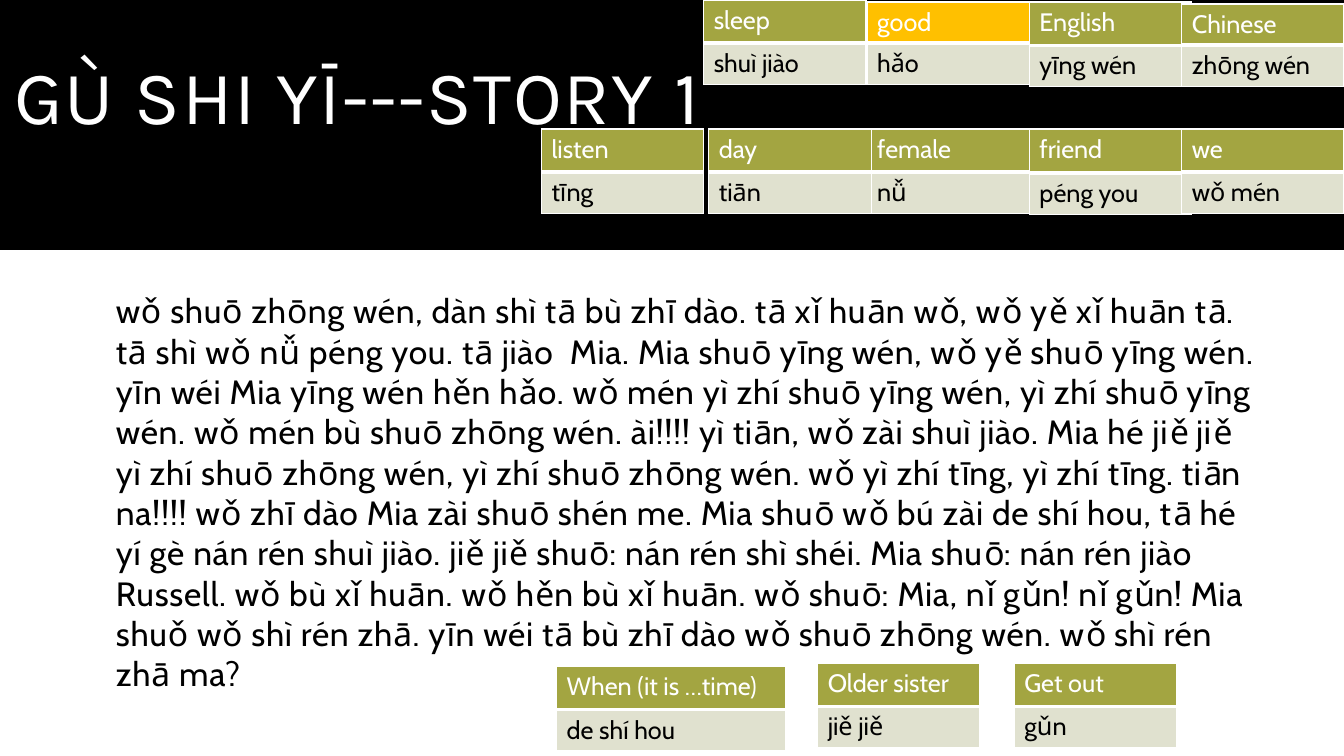
from lxml.etree import SubElement
from pptx import Presentation
from pptx.dml.color import RGBColor
from pptx.enum.shapes import MSO_SHAPE
from pptx.enum.text import MSO_ANCHOR, MSO_AUTO_SIZE, PP_ALIGN
from pptx.oxml import parse_xml
from pptx.oxml.ns import nsdecls, qn
from pptx.util import Inches, Pt

COLORS = {"black": "000000", "white": "FFFFFF", "olive": "A3A541",
          "gold": "FFC000", "pale": "E0E1CF"}
PINYIN_HEIGHT = 0.41
STORY = (
    "wǒ shuō zhōng wén, dàn shì tā bù zhī dào. tā xǐ huān wǒ, wǒ yě xǐ huān tā. "
    "tā shì wǒ nǚ péng you. tā jiào  Mia. Mia shuō yīng wén, wǒ yě shuō yīng wén. "
    "yīn wéi Mia yīng wén hěn hǎo. wǒ mén yì zhí shuō yīng wén, yì zhí shuō yīng wén. "
    "wǒ mén bù shuō zhōng wén. ài!!!! yì tiān, wǒ zài shuì jiào. Mia hé jiě jiě "
    "yì zhí shuō zhōng wén, yì zhí shuō zhōng wén. wǒ yì zhí tīng, yì zhí tīng. "
    "tiān na!!!! wǒ zhī dào Mia zài shuō shén me. Mia shuō wǒ bú zài de shí hou, "
    "tā hé yí gè nán rén shuì jiào. jiě jiě shuō: nán rén shì shéi. "
    "Mia shuō: nán rén jiào Russell. wǒ bù xǐ huān. wǒ hěn bù xǐ huān. "
    "wǒ shuō: Mia, nǐ gǔn! nǐ gǔn! Mia shuǒ wǒ shì rén zhā. "
    "yīn wéi tā bù zhī dào wǒ shuō zhōng wén. wǒ shì rén zhā ma?"
)
VOCABULARY = [
    ("good", "hǎo", 8.6, 0.02, {"header_height": 0.41, "header": "gold"}),
    ("English", "yīng wén", 10.21, 0.02, {}),
    ("friend", "péng you", 10.21, 1.28, {"header_height": 0.44}),
    ("female", "nǚ", 8.6, 1.28, {}),
    ("Chinese", "zhōng wén", 11.72, 0.04, {"header_height": 0.4}),
    ("we", "wǒ mén", 11.72, 1.28, {}),
    ("day", "tiān", 7.03, 1.28, {}),
    ("sleep", "shuì jiào", 6.98, 0, {}),
    ("listen", "tīng", 5.37, 1.28, {}),
    ("When (it is …time)", "de shí hou", 5.52, 6.61, {"width": 2.27}),
    ("Older sister", "jiě jiě", 8.11, 6.58, {}),
    ("Get out", "gǔn", 10.06, 6.58, {}),
]


def rgb(name):
    """Return the named colour."""
    return RGBColor.from_string(COLORS[name])


def add_run(p, text, font, size, color, spacing=0):
    """Add a formatted run, with letter spacing in points."""
    r = p.add_run()
    r.text = text
    r.font.name, r.font.size, r.font.bold = font, Pt(size), False
    r.font.color.rgb = rgb(color)
    if spacing:
        r.font._element.set("spc", str(round(spacing * 100)))


def add_band(s):
    """Add the black band behind the title."""
    band = s.shapes.add_shape(MSO_SHAPE.RECTANGLE, 0, 0, Inches(13.33), Inches(2.48))
    band.shadow.inherit = False
    band.fill.solid()
    band.fill.fore_color.rgb = rgb("black")
    band.line.fill.background()
    s.shapes._spTree.insert(2, band._element)


def fill_placeholder(sp, box, anchor, line_spacing):
    """Place a placeholder and return its left-aligned, unbulleted paragraph."""
    sp.left, sp.top, sp.width, sp.height = map(Inches, box)
    tf = sp.text_frame
    tf.word_wrap, tf.auto_size = True, MSO_AUTO_SIZE.NONE
    tf.vertical_anchor = anchor
    p = tf.paragraphs[0]
    p.alignment, p.line_spacing = PP_ALIGN.LEFT, line_spacing
    p.space_before = Pt(0)
    pPr = p._p.get_or_add_pPr()
    pPr.set("marL", "0")
    pPr.set("indent", "0")
    SubElement(pPr, qn("a:buNone"))
    return p


def set_borders(cell, bottom):
    """Draw white cell borders, one point wide except at the bottom."""
    tcPr = cell._tc.get_or_add_tcPr()
    widths = {"L": 1, "R": 1, "T": 1, "B": bottom}
    for i, (side, width) in enumerate(widths.items()):
        tcPr.insert(i, parse_xml(
            f'<a:ln{side} {nsdecls("a")} w="{Pt(width)}"><a:solidFill>'
            f'<a:srgbClr val="{COLORS["white"]}"/></a:solidFill></a:ln{side}>'))


def add_word(s, word, pinyin, left, top, width=1.61, header_height=0.43, header="olive"):
    """Add a two-row vocabulary table."""
    heights = (header_height, PINYIN_HEIGHT)
    table = s.shapes.add_table(2, 1, Inches(left), Inches(top), Inches(width),
                               Inches(sum(heights))).table
    table.first_row = table.horz_banding = False
    rows = [(word, header, "white", 3), (pinyin, "pale", "black", 1)]
    for i, (text, fill, color, bottom) in enumerate(rows):
        table.rows[i].height = Inches(heights[i])
        cell = table.cell(i, 0)
        cell.fill.solid()
        cell.fill.fore_color.rgb = rgb(fill)
        set_borders(cell, bottom)
        add_run(cell.text_frame.paragraphs[0], text, "Cabin", 18, color)


def main():
    """Build the story slide."""
    prs = Presentation()
    prs.slide_width, prs.slide_height = Inches(13.33), Inches(7.5)
    s = prs.slides.add_slide(prs.slide_layouts[1])
    add_band(s)
    p = fill_placeholder(s.shapes.title, (0.04, 0.06, 11.23, 1.86), MSO_ANCHOR.MIDDLE, 0.9)
    add_run(p, "GÙ SHI YĪ---STORY 1", "Karla", 54, "white", 1.2)
    p = fill_placeholder(s.placeholders[1], (1.05, 2.83, 11.55, 4.32), MSO_ANCHOR.TOP, 1.0)
    add_run(p, STORY, "Cabin", 24, "black", 0.5)
    for word, pinyin, left, top, options in VOCABULARY:
        add_word(s, word, pinyin, left, top, **options)
    prs.save("out.pptx")


if __name__ == "__main__":
    main()
